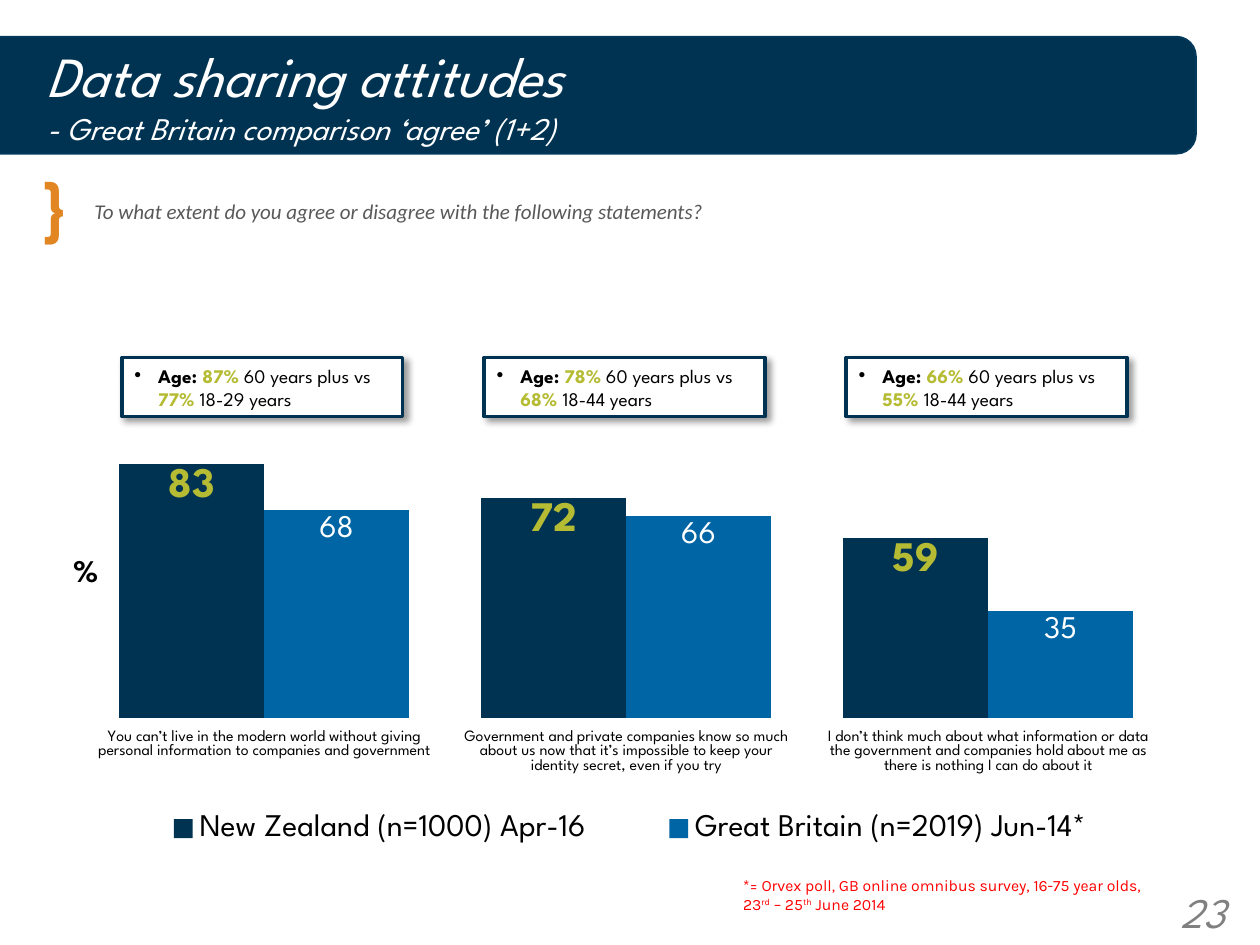
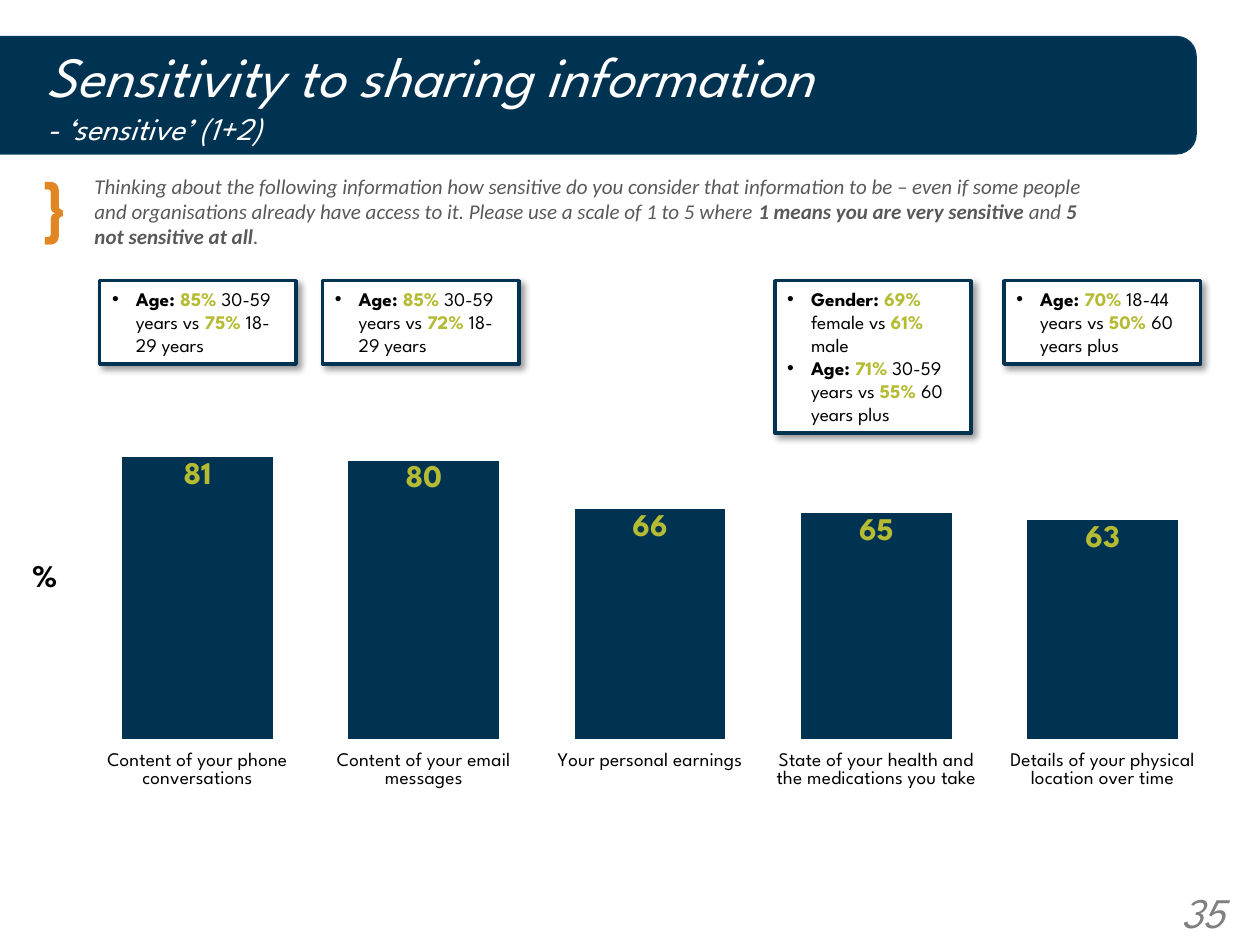
from dataclasses import dataclass

from lxml.etree import SubElement
from pptx import Presentation
from pptx.chart.data import CategoryChartData
from pptx.dml.color import RGBColor
from pptx.enum.chart import XL_CHART_TYPE, XL_LABEL_POSITION, XL_LEGEND_POSITION, XL_TICK_MARK
from pptx.enum.shapes import MSO_SHAPE
from pptx.enum.text import MSO_ANCHOR, MSO_AUTO_SIZE, PP_ALIGN
from pptx.oxml.ns import qn
from pptx.util import Cm, Pt


@dataclass(frozen=True)
class Theme:
    navy: str = "003352"
    navy_edge: str = "03395B"
    blue: str = "0065A4"
    lime: str = "B5BC34"
    orange: str = "E28623"
    red: str = "FF0000"
    black: str = "000000"
    white: str = "FFFFFF"
    question_grey: str = "595959"
    number_grey: str = "808080"
    heading_font: str = "League Spartan"
    question_font: str = "Calibri"
    note_font: str = "Karla"
    title_size: float = 32.4
    subtitle_size: float = 18
    question_size: float = 12
    brace_size: float = 40
    number_size: float = 24
    chart_size: float = 18
    callout_size: float = 11
    note_size: float = 9


@dataclass(frozen=True)
class Box:
    """A rectangle in centimetres."""
    left: float
    top: float
    width: float
    height: float

    def inside(self, dx, dy, width, height):
        return Box(self.left + dx, self.top + dy, width, height)

    @property
    def lengths(self):
        return Cm(self.left), Cm(self.top), Cm(self.width), Cm(self.height)


THEME = Theme()
BAND = Box(-0.91, 0.74, 25.02, 2.36)
TITLE = Box(0.69, 0.69, 22.86, 2.41)
BRACE = Box(0.84, 3.23, 0.69, 1.7)
QUESTION = Box(1.65, 3.53, 20.93, 1.45)
PAGE_NUMBER = Box(19.02, 17.75, 5.92, 1.02)


def rgb(color):
    return RGBColor.from_string(color)


def style_font(font, size, color, name=THEME.heading_font, bold=False, italic=False):
    font.name, font.size = name, Pt(size)
    font.bold, font.italic = bold, italic
    font.color.rgb = rgb(color)


def add_span(para, text, raised=False, **style):
    span = para.add_run()
    span.text = text
    style_font(span.font, **style)
    if raised:
        span.font._element.set("baseline", "30000")


def set_bullet(para, symbol=None, indent=0):
    props = para._p.get_or_add_pPr()
    props.set("marL", str(Cm(indent)))
    props.set("indent", str(-Cm(indent)))
    if symbol:
        SubElement(props, qn("a:buFont"), typeface="Arial")
        SubElement(props, qn("a:buChar"), char=symbol)
    else:
        SubElement(props, qn("a:buNone"))


def place(shape, box):
    shape.left, shape.top, shape.width, shape.height = box.lengths


def add_text_box(page, box, anchor=MSO_ANCHOR.TOP, inset=True):
    """Add an empty wrapped text box and return its first paragraph."""
    frame = page.shapes.add_textbox(*box.lengths).text_frame
    frame.word_wrap = True
    frame.vertical_anchor = anchor
    if not inset:
        frame.margin_left = frame.margin_right = frame.margin_top = frame.margin_bottom = 0
    return frame.paragraphs[0]


def placeholder_para(shape, box):
    """Move a placeholder and return its first paragraph, left-aligned."""
    place(shape, box)
    frame = shape.text_frame
    frame.auto_size = MSO_AUTO_SIZE.NONE
    frame.vertical_anchor = MSO_ANCHOR.MIDDLE
    para = frame.paragraphs[0]
    para.alignment = PP_ALIGN.LEFT
    para.space_before = Pt(0)
    return para


def add_band(page, box):
    band = page.shapes.add_shape(MSO_SHAPE.ROUNDED_RECTANGLE, *box.lengths)
    band.shadow.inherit = False
    band.fill.solid()
    band.fill.fore_color.rgb = rgb(THEME.navy)
    band.line.color.rgb = rgb(THEME.navy_edge)
    band.line.width = Pt(1)
    page.shapes.title.element.addprevious(band.element)


def add_page(deck, title, subtitle, question, number):
    """Add a slide with band, title, question and number; question is (text, bold) pairs."""
    page = deck.slides.add_slide(deck.slide_layouts[1])
    add_band(page, BAND)

    para = placeholder_para(page.shapes.title, TITLE)
    heading = dict(color=THEME.white, italic=True)
    add_span(para, title, size=THEME.title_size, **heading)
    para.add_line_break()
    add_span(para, subtitle, size=THEME.subtitle_size, **heading)

    para = placeholder_para(page.placeholders[1], QUESTION)
    set_bullet(para)
    for text, bold in question:
        add_span(para, text, size=THEME.question_size, color=THEME.question_grey,
                 name=THEME.question_font, bold=bold, italic=True)

    add_span(add_text_box(page, BRACE, inset=False), "}",
             size=THEME.brace_size, color=THEME.orange, bold=True)
    para = add_text_box(page, PAGE_NUMBER)
    para.alignment = PP_ALIGN.RIGHT
    add_span(para, number, size=THEME.number_size, color=THEME.number_grey, italic=True)
    return page


def set_layout(parent, index, inner, **fractions):
    """Fix the place of a plot area or legend as fractions of the chart."""
    for old in parent.findall(qn("c:layout")):
        parent.remove(old)
    layout = parent.makeelement(qn("c:layout"))
    parent.insert(index, layout)
    manual = SubElement(layout, qn("c:manualLayout"))
    if inner:
        SubElement(manual, qn("c:layoutTarget"), val="inner")
    for side in "xy":
        SubElement(manual, qn(f"c:{side}Mode"), val="edge")
    for key, value in fractions.items():
        SubElement(manual, qn(f"c:{key}"), val=str(value))


def add_column_chart(page, box, categories, series, maximum, category_size, plot_area):
    """Add a column chart; series is (name, values, fill, label style) tuples."""
    data = CategoryChartData(number_format="#,##0")
    data.categories = categories
    for name, values, *_ in series:
        data.add_series(name, values)
    chart = page.shapes.add_chart(
        XL_CHART_TYPE.COLUMN_CLUSTERED, *box.lengths, data).chart
    chart.has_title = chart.has_legend = False
    style_font(chart.font, THEME.chart_size, THEME.black)

    plot = chart.plots[0]
    plot.gap_width, plot.overlap, plot.vary_by_categories = 50, 0, False
    for column, (_, _, fill, label_style) in zip(plot.series, series):
        column.format.fill.solid()
        column.format.fill.fore_color.rgb = rgb(fill)
        labels = column.data_labels
        labels.show_value = True
        labels.position = XL_LABEL_POSITION.INSIDE_END
        labels.number_format, labels.number_format_is_linked = "#,##0", False
        style_font(labels.font, **label_style)

    scale = chart.value_axis
    scale.minimum_scale, scale.maximum_scale = 0, maximum
    scale.has_major_gridlines = scale.visible = False
    axis = chart.category_axis
    axis.major_tick_mark = XL_TICK_MARK.OUTSIDE
    axis.format.line.fill.background()
    style_font(axis.tick_labels.font, category_size, THEME.black)
    set_layout(chart.element.find(".//" + qn("c:plotArea")), 0, True, **plot_area)
    return chart


def add_legend(chart, **fractions):
    chart.has_legend = True
    legend = chart.legend
    legend.position = XL_LEGEND_POSITION.TOP
    legend.include_in_layout = False
    style_font(legend.font, THEME.chart_size, THEME.black)
    set_layout(legend._element, 1, False, **fractions)


def add_percent_sign(page, box):
    para = add_text_box(page, box, MSO_ANCHOR.MIDDLE, inset=False)
    para.alignment = PP_ALIGN.CENTER
    add_span(para, "%", size=THEME.chart_size, color=THEME.black, bold=True)


def add_callout(page, box, *findings):
    """Add a shadowed box; a finding is (label, share, group, other share, other group)."""
    callout = page.shapes.add_shape(MSO_SHAPE.RECTANGLE, *box.lengths)
    callout.shadow.inherit = False
    shadow = SubElement(callout.element.spPr.find(qn("a:effectLst")), qn("a:outerShdw"),
                        blurRad=str(Pt(4)), dist=str(Pt(3)), dir="2700000",
                        algn="tl", rotWithShape="0")
    tint = SubElement(shadow, qn("a:srgbClr"), val=THEME.black)
    SubElement(tint, qn("a:alpha"), val="40000")
    callout.fill.solid()
    callout.fill.fore_color.rgb = rgb(THEME.white)
    callout.line.color.rgb = rgb(THEME.navy)
    callout.line.width = Pt(2)

    frame = callout.text_frame
    frame.word_wrap = True
    frame.auto_size = MSO_AUTO_SIZE.SHAPE_TO_FIT_TEXT
    frame.vertical_anchor = MSO_ANCHOR.TOP
    for index, (label, share, group, other_share, other_group) in enumerate(findings):
        para = frame.add_paragraph() if index else frame.paragraphs[0]
        para.alignment = PP_ALIGN.LEFT
        set_bullet(para, "•", 0.48)
        for text, color, bold in ((f"{label}: ", THEME.black, True),
                                  (share, THEME.lime, True),
                                  (f" {group} vs ", THEME.black, False),
                                  (f"{other_share} ", THEME.lime, True),
                                  (other_group, THEME.black, False)):
            add_span(para, text, size=THEME.callout_size, color=color, bold=bold)


def add_survey_note(page, box):
    para = add_text_box(page, box, MSO_ANCHOR.MIDDLE)
    for text, raised in (("*= Orvex poll, GB online omnibus survey, 16-75 year olds, 23", False),
                         ("rd", True), (" – 25", False), ("th", True), (" June 2014", False)):
        add_span(para, text, raised=raised, size=THEME.note_size,
                 color=THEME.red, name=THEME.note_font)


def build_attitudes(deck):
    page = add_page(
        deck, "Data sharing attitudes", "- Great Britain comparison ‘agree’ (1+2)",
        [("To what extent do you agree or disagree with the following statements?", False)], "23")
    box = Box(0, 5.41, 25.4, 11.89)
    chart = add_column_chart(
        page, box,
        ["You can’t live in the modern world without giving personal information to "
         "companies and government",
         "Government and private companies know so much about us now that it’s impossible "
         "to keep your identity secret, even if you try",
         "I don’t think much about what information or data the government and companies "
         "hold about me as there is nothing I can do about it"],
        [("New Zealand (n=1000) Apr-16", (83, 72, 59), THEME.navy,
          dict(size=24, color=THEME.lime, bold=True)),
         ("Great Britain (n=2019) Jun-14*", (68, 66, 35), THEME.blue,
          dict(size=18, color=THEME.white))],
        120, 9, dict(x=0.066, y=0.14, w=0.862, h=0.623))
    add_legend(chart, x=0.08, y=0.91, w=0.84, h=0.08)
    add_percent_sign(page, box.inside(1.03, 5.57, 1.4, 1))
    add_survey_note(page, Box(14.73, 17.53, 8.59, 1.02))
    findings = [("Age", "87%", "60 years plus", "77%", "18-29 years"),
                ("Age", "78%", "60 years plus", "68%", "18-44 years"),
                ("Age", "66%", "60 years plus", "55%", "18-44 years")]
    for index, finding in enumerate(findings):
        add_callout(page, box.inside(2.46 + 7.3 * index, 1.8, 5.66, 1.19), finding)


def build_sensitivity(deck):
    page = add_page(
        deck, "Sensitivity to sharing information", "- ‘sensitive’ (1+2)",
        [("Thinking about the following information how sensitive do you consider that "
          "information to be – even if some people and organisations already have access "
          "to it. Please use a scale of 1 to 5 where ", False),
         ("1 means you are very sensitive", True), (" and ", False),
         ("5 not sensitive at all", True), (".", False)], "35")
    box = Box(0, 5.79, 25.4, 11.13)
    add_column_chart(
        page, box,
        ["Content of your phone conversations", "Content of your email messages",
         "Your personal earnings", "State of your health and the medications you take",
         "Details of your physical location over time"],
        [("Series 1", (81, 80, 66, 65, 63), THEME.navy,
          dict(size=18, color=THEME.lime, bold=True))],
        100, 11, dict(x=0.067, y=0.188, w=0.898, h=0.631))
    add_percent_sign(page, box.inside(0.2, 5.31, 1.4, 1))
    callouts = [
        (2.01, 1.68, [("Age", "85%", "30-59 years", "75%", "18-29 years")]),
        (6.5, 1.68, [("Age", "85%", "30-59 years", "72%", "18-29 years")]),
        (15.62, 3.07, [("Gender", "69%", "female", "61%", "male"),
                       ("Age", "71%", "30-59 years", "55%", "60 years plus")]),
        (20.24, 1.68, [("Age", "70%", "18-44 years", "50%", "60 years plus")])]
    for left, height, findings in callouts:
        add_callout(page, box.inside(left, -0.13, 3.96, height), *findings)


def main():
    deck = Presentation()
    deck.slide_width, deck.slide_height = Cm(25.4), Cm(19.05)
    build_attitudes(deck)
    build_sensitivity(deck)
    deck.save("out.pptx")


if __name__ == "__main__":
    main()
